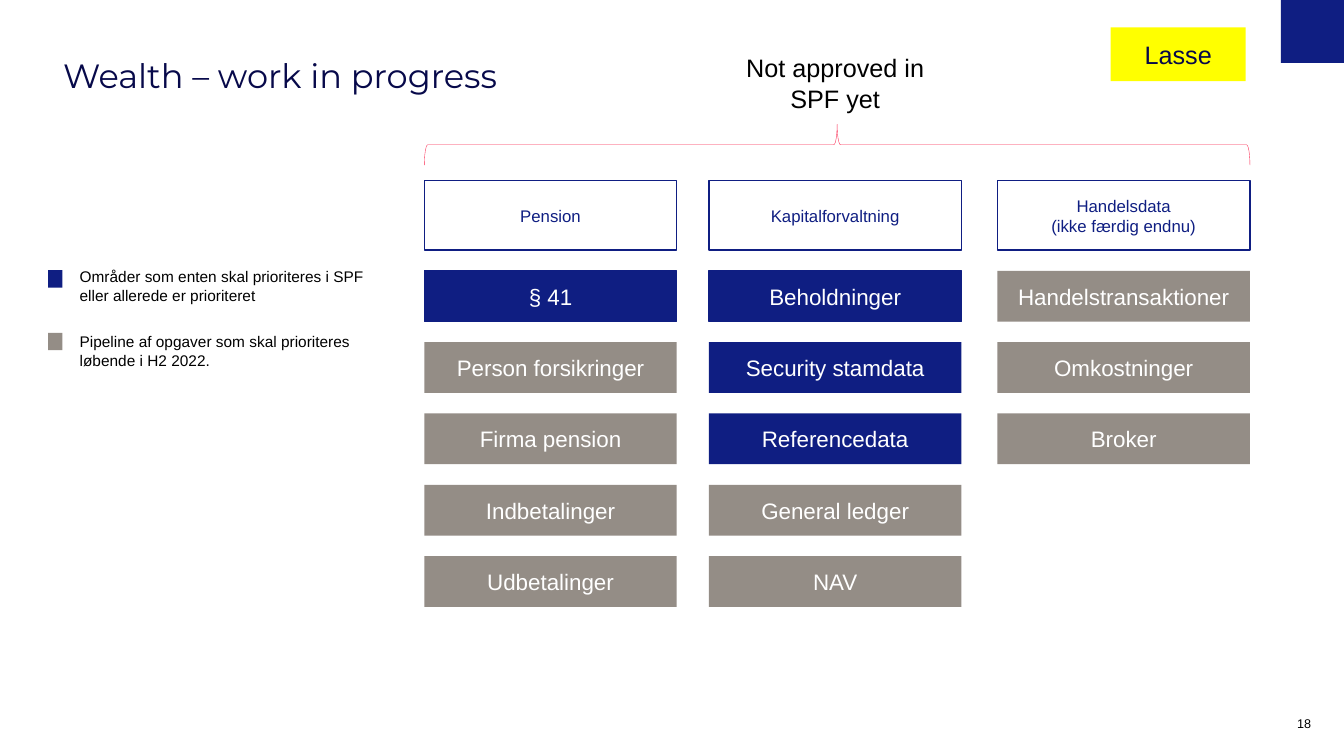
from dataclasses import dataclass

from pptx import Presentation
from pptx.dml.color import RGBColor
from pptx.enum.shapes import MSO_SHAPE
from pptx.enum.text import MSO_ANCHOR, MSO_AUTO_SIZE, PP_ALIGN
from pptx.util import Pt

RECTANGLE, LEFT_BRACE = MSO_SHAPE.RECTANGLE, MSO_SHAPE.LEFT_BRACE
TOP, MIDDLE, BOTTOM = MSO_ANCHOR.TOP, MSO_ANCHOR.MIDDLE, MSO_ANCHOR.BOTTOM
LEFT, CENTER, RIGHT = PP_ALIGN.LEFT, PP_ALIGN.CENTER, PP_ALIGN.RIGHT
NO_AUTOFIT = MSO_AUTO_SIZE.NONE
TITLE_ONLY = 5


@dataclass(frozen=True)
class Theme:
    title_font: str = "Montserrat"
    body_font: str = "Arial"
    navy: str = "0F1E82"
    ink: str = "07094A"
    grey: str = "948D86"
    pink: str = "FB264E"
    yellow: str = "FFFF00"
    white: str = "FFFFFF"
    black: str = "000000"
    title_size: float = 24
    callout_size: float = 18
    task_size: float = 16
    header_size: float = 12
    legend_size: float = 11
    number_size: float = 9


class SlideBuilder:
    def __init__(self, slide, theme):
        self.slide = slide
        self.theme = theme

    def set_text(self, frame, text, size, color, align=LEFT, anchor=TOP, font=None):
        frame.text = text
        frame.word_wrap = True
        frame.auto_size = NO_AUTOFIT
        frame.vertical_anchor = anchor
        for paragraph in frame.paragraphs:
            paragraph.alignment = align
            for run in paragraph.runs:
                run.font.name = font or self.theme.body_font
                run.font.size = Pt(size)
                run.font.color.rgb = RGBColor.from_string(color)

    def remove_insets(self, frame):
        frame.margin_left = frame.margin_right = 0
        frame.margin_top = frame.margin_bottom = 0

    def title(self, text, left, top, width, height):
        title = self.slide.shapes.title
        title.left, title.top = Pt(left), Pt(top)
        title.width, title.height = Pt(width), Pt(height)
        self.remove_insets(title.text_frame)
        self.set_text(title.text_frame, text, self.theme.title_size, self.theme.ink,
                      font=self.theme.title_font)

    def shape(self, kind, left, top, width, height, fill=None, line=None, weight=1):
        shape = self.slide.shapes.add_shape(
            kind, Pt(left), Pt(top), Pt(width), Pt(height))
        shape.shadow.inherit = False
        if fill:
            shape.fill.solid()
            shape.fill.fore_color.rgb = RGBColor.from_string(fill)
        else:
            shape.fill.background()
        if line:
            shape.line.color.rgb = RGBColor.from_string(line)
            shape.line.width = Pt(weight)
        else:
            shape.line.fill.background()
        return shape

    def box(self, text, left, top, width, height, size, color, fill=None, line=None):
        box = self.shape(RECTANGLE, left, top, width, height, fill, line)
        self.set_text(box.text_frame, text, size, color, CENTER, MIDDLE)

    def label(self, text, left, top, width, height, size, align=LEFT, anchor=TOP):
        label = self.slide.shapes.add_textbox(
            Pt(left), Pt(top), Pt(width), Pt(height))
        self.remove_insets(label.text_frame)
        self.set_text(label.text_frame, text, size, self.theme.black, align, anchor)

    def brace_above(self, left, top, width, height):
        """Draw a brace that spans the width and points upwards."""
        brace = self.shape(LEFT_BRACE, left + (width - height) / 2,
                           top + (height - width) / 2, height, width,
                           line=self.theme.pink, weight=0.25)
        brace.rotation = 90


# Header, left edge, number of prioritised tasks, tasks
AREAS = [
    ("Pension", 303.1, 1,
     ["§ 41", "Person forsikringer", "Firma pension", "Indbetalinger", "Udbetalinger"]),
    ("Kapitalforvaltning", 506.4, 3,
     ["Beholdninger", "Security stamdata", "Referencedata", "General ledger", "NAV"]),
    ("Handelsdata\n(ikke færdig endnu)", 712.5, 0,
     ["Handelstransaktioner", "Omkostninger", "Broker"]),
]
COLUMN_WIDTH = 180.3
HEADER_TOP, HEADER_HEIGHT = 129, 49.7
TASK_TOP, TASK_HEIGHT, TASK_STEP = 193.4, 36.3, 50.95


def main():
    theme = Theme()
    presentation = Presentation()
    presentation.slide_width, presentation.slide_height = Pt(960), Pt(540)
    slide = presentation.slides.add_slide(presentation.slide_layouts[TITLE_ONLY])
    page = SlideBuilder(slide, theme)

    page.shape(RECTANGLE, 915, 0, 45, 45, theme.navy)
    page.title("Wealth – work in progress", 45, 39, 825, 75.6)
    page.label("18", 915, 507.6, 21.6, 14.4, theme.number_size, RIGHT, BOTTOM)

    for header, left, prioritised, tasks in AREAS:
        page.box(header, left, HEADER_TOP, COLUMN_WIDTH, HEADER_HEIGHT,
                 theme.header_size, theme.navy, line=theme.navy)
        for row, task in enumerate(tasks):
            fill = theme.navy if row < prioritised else theme.grey
            outline = theme.navy if row == 0 and prioritised else None
            page.box(task, left, TASK_TOP + row * TASK_STEP, COLUMN_WIDTH, TASK_HEIGHT,
                     theme.task_size, theme.white, fill, outline)

    legend = [
        (theme.navy, 193, 191,
         "Områder som enten skal prioriteres i SPF eller allerede er prioriteret"),
        (theme.grey, 237.8, 237.6,
         "Pipeline af opgaver som skal prioriteres løbende i H2 2022."),
    ]
    for color, key_top, text_top, meaning in legend:
        page.shape(RECTANGLE, 34.4, key_top, 10.2, 12.4, color)
        page.label(meaning, 56.9, text_top, 224.6, 26.6, theme.legend_size)

    page.label("Not approved in SPF yet", 531.4, 37.6, 130.3, 43.9,
               theme.callout_size, CENTER)
    page.brace_above(303.1, 88.8, 589.7, 29.2)
    page.box("Lasse", 793.4, 19.5, 96.5, 38.4, theme.callout_size, theme.ink, theme.yellow)

    presentation.save("out.pptx")


if __name__ == "__main__":
    main()
